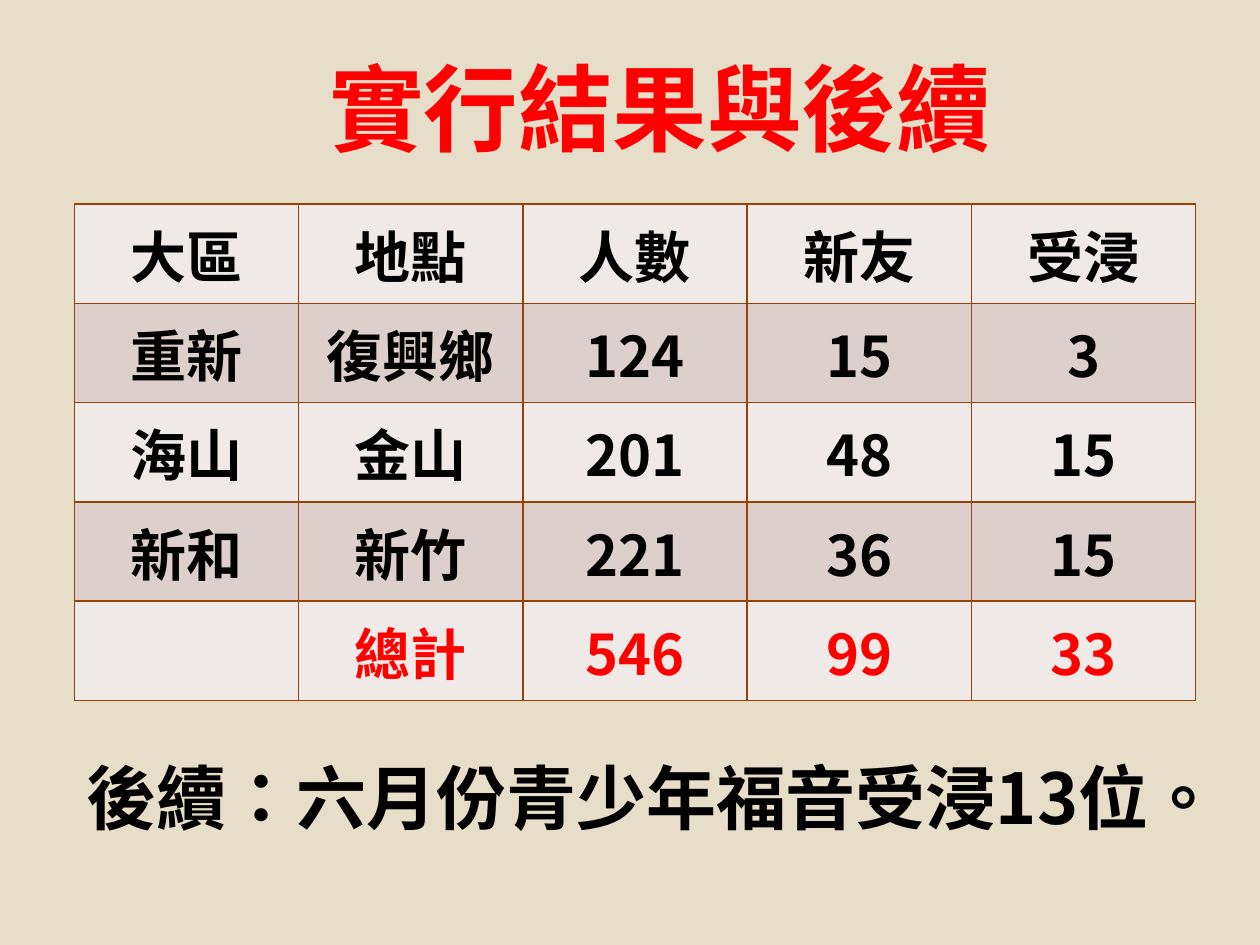
"""Build the results and follow-up slide with its attendance table."""
from lxml.etree import SubElement
from pptx import Presentation
from pptx.dml.color import RGBColor
from pptx.enum.text import MSO_ANCHOR, PP_ALIGN
from pptx.oxml.ns import qn
from pptx.util import Inches, Pt

FONT = "Noto Sans CJK SC"
RED, BLACK, BORDER = "FF0000", "000000", "964305"
BANDS = ["EFE9E7", "DDCFCC"]
LEFT, WIDTH = 0.59, 8.9
ROWS = [
    ["大區", "地點", "人數", "新友", "受浸"],
    ["重新", "復興鄉", "124", "15", "3"],
    ["海山", "金山", "201", "48", "15"],
    ["新和", "新竹", "221", "36", "15"],
    ["", "總計", "546", "99", "33"],
]


def rgb(color):
    return RGBColor.from_string(color)


def write(tf, text, size, color, align):
    p = tf.paragraphs[0]
    p.text = text
    p.alignment = align
    p.font.name, p.font.size, p.font.bold = FONT, Pt(size), True
    p.font.color.rgb = rgb(color)
    props = p._p.pPr.find(qn("a:defRPr"))
    props.set("lang", "zh-TW")
    SubElement(props, qn("a:ea")).set("typeface", FONT)
    for r in p.runs:
        r._r.get_or_add_rPr().set("lang", "zh-TW")


prs = Presentation()
prs.slide_width, prs.slide_height = Inches(10), Inches(7.5)
s = prs.slides.add_slide(prs.slide_layouts[6])
s.background.fill.solid()
s.background.fill.fore_color.rgb = rgb("E7DEC9")

table = s.shapes.add_table(
    len(ROWS), len(ROWS[0]), Inches(LEFT), Inches(1.62), Inches(WIDTH), Inches(3.94)
).table
for i, row in enumerate(ROWS):
    for j, text in enumerate(row):
        cell = table.cell(i, j)
        cell.vertical_anchor = MSO_ANCHOR.MIDDLE
        for side in ("a:lnL", "a:lnR", "a:lnT", "a:lnB"):
            ln = SubElement(cell._tc.get_or_add_tcPr(), qn(side), w=str(Pt(1)))
            SubElement(SubElement(ln, qn("a:solidFill")), qn("a:srgbClr"), val=BORDER)
        cell.fill.solid()
        cell.fill.fore_color.rgb = rgb(BANDS[i % 2])
        if text:
            color = RED if i == len(ROWS) - 1 else BLACK
            write(cell.text_frame, text, 32, color, PP_ALIGN.CENTER)

for text, box, size, color, align in [
    ("實行結果與後續", (2.09, 0.35, 6.3, 1.01), 54, RED, PP_ALIGN.CENTER),
    ("後續：六月份青少年福音受浸13位。", (LEFT, 5.94, WIDTH, 0.77), 40, BLACK, PP_ALIGN.LEFT),
]:
    tf = s.shapes.add_textbox(*map(Inches, box)).text_frame
    tf.word_wrap = True
    write(tf, text, size, color, align)

prs.save("out.pptx")
